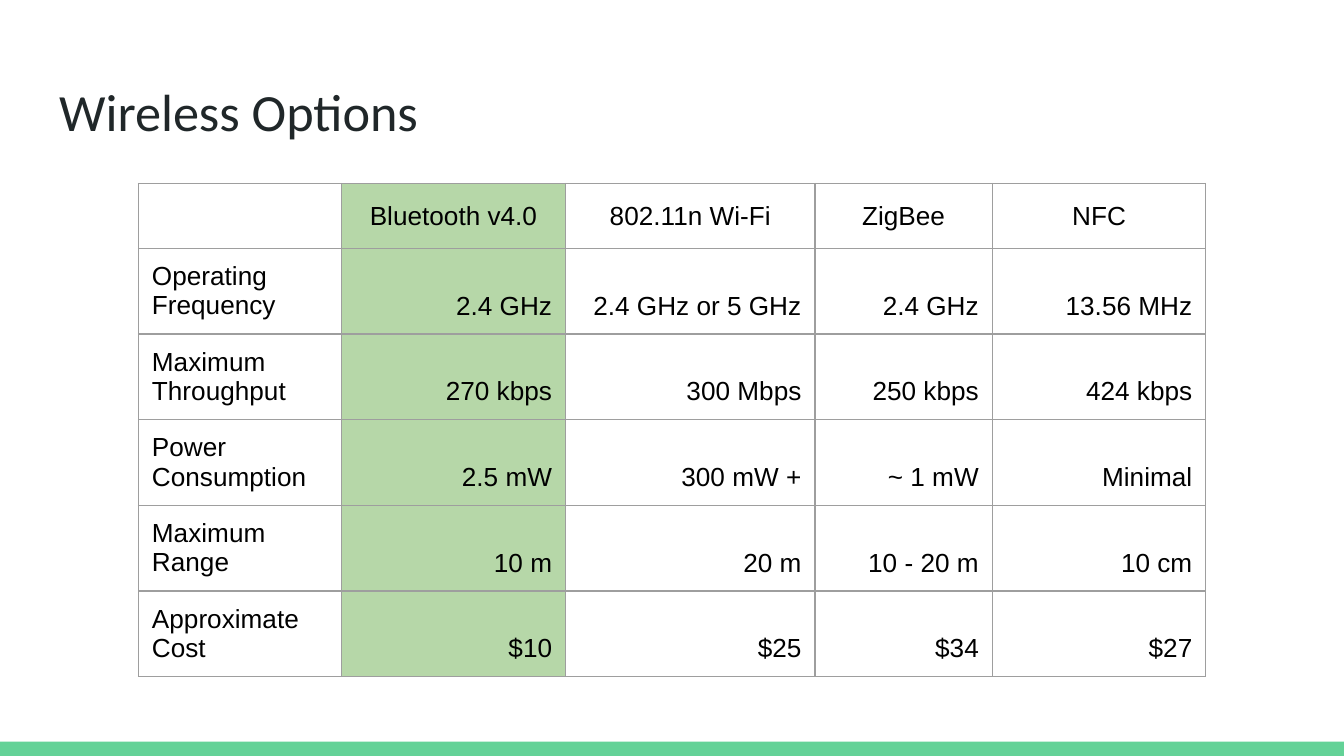
from lxml import etree
from pptx import Presentation
from pptx.dml.color import RGBColor
from pptx.enum import shapes, text
from pptx.oxml import ns
from pptx.util import Pt

ROWS = [
    ("", "Bluetooth v4.0", "802.11n Wi-Fi", "ZigBee", "NFC"),
    ("Operating Frequency", "2.4 GHz", "2.4 GHz or 5 GHz", "2.4 GHz", "13.56 MHz"),
    ("Maximum Throughput", "270 kbps", "300 Mbps", "250 kbps", "424 kbps"),
    ("Power Consumption", "2.5 mW", "300 mW +", "~ 1 mW", "Minimal"),
    ("Maximum Range", "10 m", "20 m", "10 - 20 m", "10 cm"),
    ("Approximate Cost", "$10", "$25", "$34", "$27"),
]
COLUMN_WIDTHS = [108.8, 120, 133.6, 95, 114.4]
ROW_HEIGHTS = [34.8] + [45.8] * 5
CHOSEN_COLUMN = 1
WIDTH, HEIGHT, BAR_HEIGHT = 720, 405, 7.6
PADDING = dict.fromkeys(("margin_left", "margin_right", "margin_top", "margin_bottom"), Pt(7.2))


def apply(target, **values):
    for name, value in values.items():
        setattr(target, name, value)


def paint(fill, color):
    fill.solid()
    fill.fore_color.rgb = RGBColor.from_string(color)


def format_font(font, name, size, color):
    apply(font, name=name, size=Pt(size))
    font.color.rgb = RGBColor.from_string(color)


def add_borders(cell, color, width):
    properties = cell._tc.get_or_add_tcPr()
    for index, side in enumerate(("lnL", "lnR", "lnT", "lnB")):
        line = etree.Element(ns.qn(f"a:{side}"), w=str(Pt(width)))
        fill = etree.SubElement(line, ns.qn("a:solidFill"))
        etree.SubElement(fill, ns.qn("a:srgbClr"), val=color)
        properties.insert(index, line)


def cell_layout(row, column):
    """Return the vertical anchor and the alignment of a cell."""
    if row == 0:
        return text.MSO_ANCHOR.MIDDLE, text.PP_ALIGN.CENTER
    if column == 0:
        return text.MSO_ANCHOR.TOP, text.PP_ALIGN.LEFT
    return text.MSO_ANCHOR.BOTTOM, text.PP_ALIGN.RIGHT


presentation = Presentation()
apply(presentation, slide_width=Pt(WIDTH), slide_height=Pt(HEIGHT))
slide = presentation.slides.add_slide(presentation.slide_layouts[5])

title = slide.shapes.title
apply(title, left=Pt(24.5), top=Pt(35.3), width=Pt(671), height=Pt(45.4))
title.text_frame.text = "Wireless Options"
apply(title.text_frame, auto_size=text.MSO_AUTO_SIZE.NONE, word_wrap=True,
      vertical_anchor=text.MSO_ANCHOR.TOP, **PADDING)
heading = title.text_frame.paragraphs[0]
heading.alignment = text.PP_ALIGN.LEFT
format_font(heading.runs[0].font, "Calibri", 28, "202729")

bar = slide.shapes.add_shape(shapes.MSO_SHAPE.RECTANGLE, 0, Pt(HEIGHT - BAR_HEIGHT),
                             Pt(WIDTH), Pt(BAR_HEIGHT))
bar.shadow.inherit = False
paint(bar.fill, "63D297")
bar.line.fill.background()

table = slide.shapes.add_table(len(ROWS), len(COLUMN_WIDTHS), Pt(74.2), Pt(98.3),
                               Pt(sum(COLUMN_WIDTHS)), Pt(sum(ROW_HEIGHTS))).table
apply(table, first_row=False, horz_banding=False)
for column, width in zip(table.columns, COLUMN_WIDTHS):
    column.width = Pt(width)
for row, height in zip(table.rows, ROW_HEIGHTS):
    row.height = Pt(height)

for row_index, values in enumerate(ROWS):
    for column_index, value in enumerate(values):
        cell = table.cell(row_index, column_index)
        paint(cell.fill, "B6D7A8" if column_index == CHOSEN_COLUMN else "FFFFFF")
        add_borders(cell, "9E9E9E", 0.75)
        if not value:
            continue
        anchor, alignment = cell_layout(row_index, column_index)
        apply(cell, text=value, vertical_anchor=anchor, **PADDING)
        paragraph = cell.text_frame.paragraphs[0]
        paragraph.alignment = alignment
        format_font(paragraph.runs[0].font, "Arial", 14, "000000")

presentation.save("out.pptx")
